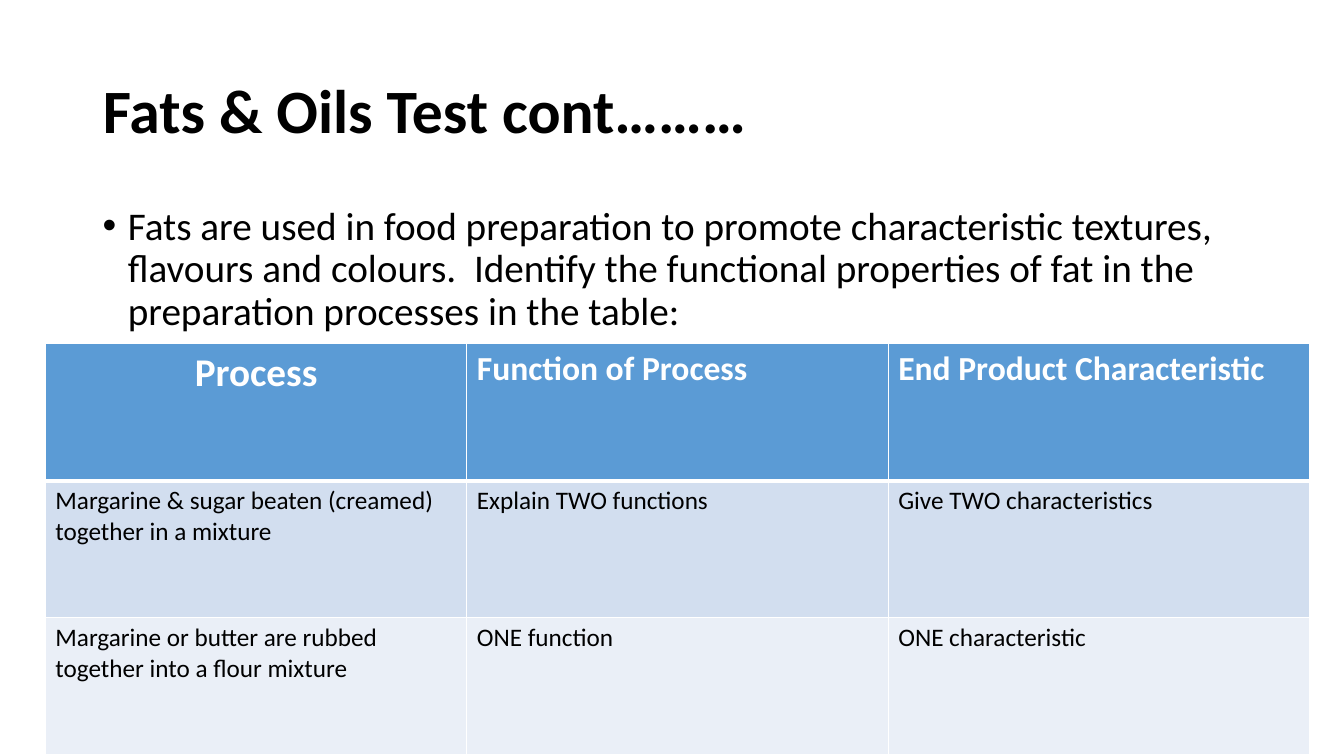
import dataclasses

import lxml.etree
import pptx
import pptx.dml.color
import pptx.enum.text
import pptx.oxml.ns
import pptx.slide
import pptx.table
import pptx.text.text
import pptx.util

Inches = pptx.util.Inches
RGBColor = pptx.dml.color.RGBColor
PP_ALIGN = pptx.enum.text.PP_ALIGN
MSO_ANCHOR = pptx.enum.text.MSO_ANCHOR

BLACK = RGBColor(0x00, 0x00, 0x00)
WHITE = RGBColor(0xFF, 0xFF, 0xFF)
HEADER_BLUE = RGBColor(0x5B, 0x9B, 0xD5)
BAND_DARK = RGBColor(0xD2, 0xDE, 0xEF)
BAND_LIGHT = RGBColor(0xEA, 0xEF, 0xF7)

QUESTION = (
    "Fats are used in food preparation to promote characteristic textures, "
    "flavours and colours.  Identify the functional properties of fat in the "
    "preparation processes in the table:"
)


@dataclasses.dataclass(frozen=True)
class TableRow:
    texts: tuple[str, str, str]
    fill: RGBColor
    sizes: tuple[int, int, int] = (18, 18, 18)
    color: RGBColor = BLACK
    bold: bool = False
    first_align: PP_ALIGN = PP_ALIGN.LEFT
    top_border: float = 1
    bottom_border: float = 1


ROWS = (
    TableRow(
        ("Process", "Function of Process", "End Product Characteristic"),
        HEADER_BLUE,
        sizes=(28, 24, 24),
        color=WHITE,
        bold=True,
        first_align=PP_ALIGN.CENTER,
        bottom_border=3,
    ),
    TableRow(
        (
            "Margarine & sugar beaten (creamed) together in a mixture",
            "Explain TWO functions",
            "Give TWO characteristics",
        ),
        BAND_DARK,
        top_border=3,
    ),
    TableRow(
        (
            "Margarine or butter are rubbed together into a flour mixture",
            "ONE function",
            "ONE characteristic",
        ),
        BAND_LIGHT,
    ),
)


def write_text(
    text_frame: pptx.text.text.TextFrame,
    text: str,
    *,
    size: float,
    color: RGBColor = BLACK,
    bold: bool = False,
    align: PP_ALIGN = PP_ALIGN.LEFT,
    line_spacing: float = 1.0,
    space_before: float = 0,
    bullet: bool = False,
) -> None:
    text_frame.word_wrap = True
    paragraph = text_frame.paragraphs[0]
    paragraph.alignment = align
    paragraph.line_spacing = line_spacing
    paragraph.space_before = pptx.util.Pt(space_before)
    if bullet:
        properties = paragraph._p.get_or_add_pPr()
        properties.set("marL", str(Inches(0.25)))
        properties.set("indent", str(Inches(-0.25)))
        for tag, name, value in (("a:buFont", "typeface", "Arial"), ("a:buChar", "char", "•")):
            lxml.etree.SubElement(properties, pptx.oxml.ns.qn(tag)).set(name, value)
    run = paragraph.add_run()
    run.text = text
    run.font.name = "Calibri"
    run.font.size = pptx.util.Pt(size)
    run.font.bold = bold
    run.font.color.rgb = color


def set_borders(cell: pptx.table._Cell, top: float, bottom: float) -> None:
    properties = cell._tc.get_or_add_tcPr()
    sides = (("a:lnL", 1), ("a:lnR", 1), ("a:lnT", top), ("a:lnB", bottom))
    for position, (tag, width) in enumerate(sides):
        line = lxml.etree.Element(pptx.oxml.ns.qn(tag), w=str(pptx.util.Pt(width)))
        fill = lxml.etree.SubElement(line, pptx.oxml.ns.qn("a:solidFill"))
        lxml.etree.SubElement(fill, pptx.oxml.ns.qn("a:srgbClr"), val=str(WHITE))
        properties.insert(position, line)


def add_title(slide: pptx.slide.Slide) -> None:
    title = slide.shapes.title
    title.left, title.top = Inches(0.92), Inches(0.4)
    title.width, title.height = Inches(11.5), Inches(1.45)
    title.text_frame.vertical_anchor = MSO_ANCHOR.MIDDLE
    title.text_frame.auto_size = pptx.enum.text.MSO_AUTO_SIZE.NONE
    write_text(title.text_frame, "Fats & Oils Test cont………", size=44, bold=True, line_spacing=0.9)


def add_question(slide: pptx.slide.Slide) -> None:
    question = slide.shapes.add_textbox(Inches(0.92), Inches(2), Inches(11.5), Inches(4.76))
    write_text(
        question.text_frame, QUESTION, size=28, line_spacing=0.9, space_before=10, bullet=True
    )


def add_process_table(slide: pptx.slide.Slide) -> None:
    table = slide.shapes.add_table(
        len(ROWS), 3, Inches(0.45), Inches(3.41), Inches(12.54), Inches(4.08)
    ).table
    for row_index, row in enumerate(ROWS):
        for column_index, (text, size) in enumerate(zip(row.texts, row.sizes)):
            cell = table.cell(row_index, column_index)
            cell.fill.solid()
            cell.fill.fore_color.rgb = row.fill
            set_borders(cell, row.top_border, row.bottom_border)
            align = row.first_align if column_index == 0 else PP_ALIGN.LEFT
            write_text(
                cell.text_frame, text, size=size, color=row.color, bold=row.bold, align=align
            )


def main() -> None:
    """Build the fats and oils test slide and save it."""
    presentation = pptx.Presentation()
    presentation.slide_width = Inches(13.33)
    presentation.slide_height = Inches(7.5)
    slide = presentation.slides.add_slide(presentation.slide_layouts[5])
    add_title(slide)
    add_question(slide)
    add_process_table(slide)
    presentation.save("out.pptx")


if __name__ == "__main__":
    main()
